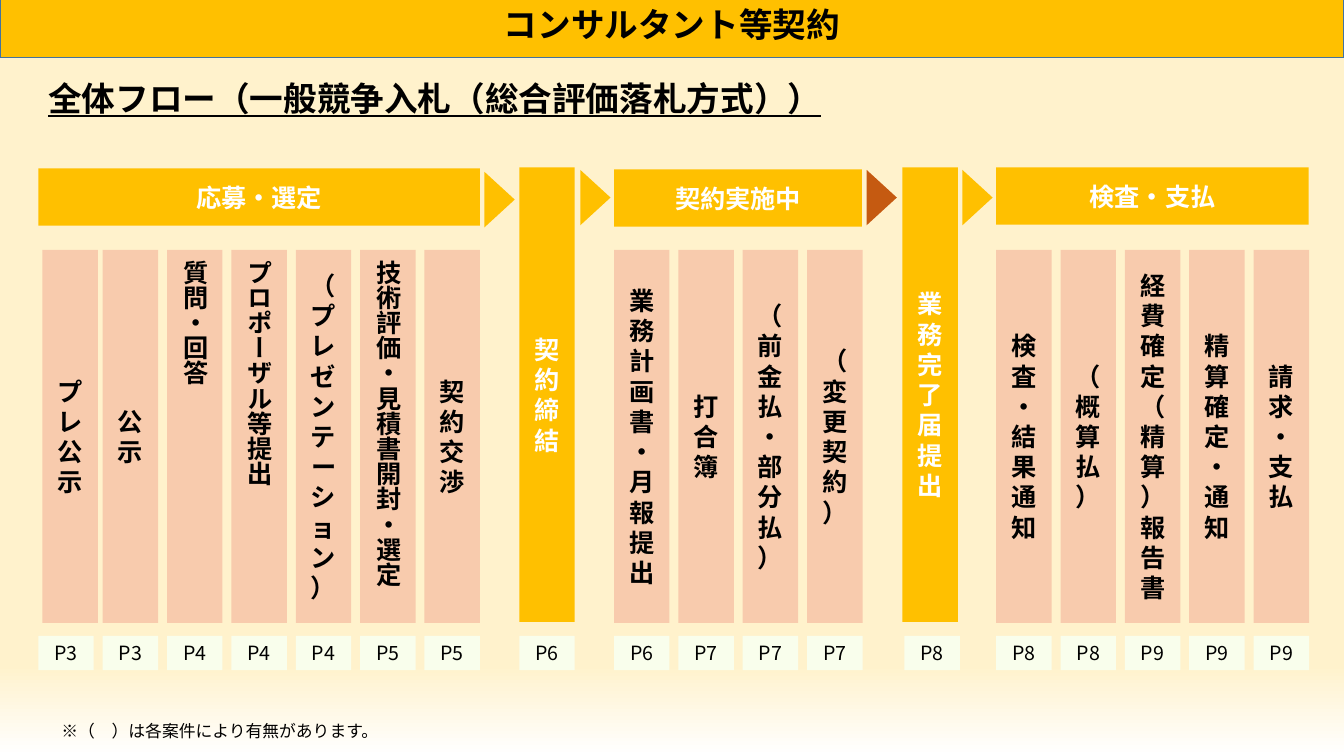
from lxml import etree
from pptx import Presentation
from pptx import util as u
from pptx.dml.color import RGBColor
from pptx.enum import shapes, text
from pptx.oxml.ns import qn

FONT = "Noto Sans CJK JP"
GOLD, PEACH, MINT, RUST = "FFC000", "F8CBAD", "F9FEEC", "C55A11"
BLACK, WHITE = "000000", "FFFFFF"


def paint(color_format, value):
    color_format.rgb = RGBColor.from_string(value)


def write(shape, words, size, color, bold=False, align=text.PP_ALIGN.CENTER, direction="horz", spacing=None):
    frame = shape.text_frame
    frame.text = words
    frame.word_wrap = True
    frame.vertical_anchor = text.MSO_ANCHOR.MIDDLE
    shape.element.txBody.bodyPr.set("vert", direction)
    for paragraph in frame.paragraphs:
        paragraph.alignment = align
        paragraph.line_spacing = spacing
        for run in paragraph.runs:
            run.font.size = u.Pt(size)
            run.font.bold = bold
            run.font.name = FONT
            paint(run.font.color, color)
            east_asian = etree.SubElement(run.font._element, qn("a:ea"))
            east_asian.set("typeface", FONT)


presentation = Presentation()
presentation.slide_width = u.Inches(13.33)
presentation.slide_height = u.Inches(7.5)
slide = presentation.slides.add_slide(presentation.slide_layouts[6])

background = slide.background.fill
background.gradient()
background.gradient_angle = 270
for stop, position, value in zip(background.gradient_stops, (0.88, 1), ("FFF2CC", WHITE)):
    stop.position = position
    paint(stop.color, value)

headings = [
    ("全体フロー（一般競争入札（総合評価落札方式））", 0.38, 0.67, 12, 0.65, 24, True),
    ("※（\u3000）は各案件により有無があります。".replace("\u3000", "　"), 0.51, 6.99, 3.47, 0.55, 12, False),
]
for words, left, top, width, height, size, is_title in headings:
    box = slide.shapes.add_textbox(*map(u.Inches, (left, top, width, height)))
    write(box, words, size, BLACK, is_title, text.PP_ALIGN.LEFT, spacing=0.9)
    if is_title:
        box.text_frame.paragraphs[0].runs[0].font.underline = True

banner = slide.shapes.add_shape(
    shapes.MSO_SHAPE.FLOWCHART_PROCESS, 0, u.Inches(-0.1), presentation.slide_width, u.Inches(0.67))
banner.shadow.inherit = False
banner.fill.solid()
paint(banner.fill.fore_color, GOLD)
paint(banner.line.color, "43739E")
banner.line.width = u.Pt(1)
write(banner, "コンサルタント等契約", 24, BLACK, True)

COLUMN = 0.55
PITCH = (4.21 - 0.38) / 6
STEP_TOP, STEP_HEIGHT = 2.48, 3.7
PAGE_TOP, PAGE_HEIGHT = 6.31, 0.34
UPRIGHT, EAST, STACKED = "horz", "eaVert", "wordArtVertRtl"

phases = [
    ("応募・選定", 0.38, 1.67, 4.38, [
        ("プレ公示", UPRIGHT, "P3"),
        ("公示", UPRIGHT, "P3"),
        ("質問・回答", EAST, "P4"),
        ("プロポーザル等提出", EAST, "P4"),
        ("（プレゼンテーション）", STACKED, "P4"),
        ("技術評価・見積書開封・選定", EAST, "P5"),
        ("契約交渉", UPRIGHT, "P5"),
    ]),
    ("契約実施中", 6.09, 1.68, 2.46, [
        ("業務計画書・月報提出", UPRIGHT, "P6"),
        ("打合簿", UPRIGHT, "P7"),
        ("（前金払・部分払）", STACKED, "P7"),
        ("（変更契約）", STACKED, "P7"),
    ]),
    ("検査・支払", 9.88, 1.66, 3.1, [
        ("検査・結果通知", UPRIGHT, "P8"),
        ("（概算払）", STACKED, "P8"),
        ("経費確定（精算）報告書", STACKED, "P9"),
        ("精算確定\n・通知", UPRIGHT, "P9"),
        ("請求・支払", UPRIGHT, "P9"),
    ]),
]
milestones = [("契約締結", 5.15, "P6", 5.15), ("業務完了届提出", 8.95, "P8", 8.97)]

boxes = []
for phase, start, top, width, steps in phases:
    boxes.append((phase, start, top, width, 0.57, GOLD, 18, WHITE, True, UPRIGHT))
    for index, (step, direction, page) in enumerate(steps):
        left = start + index * PITCH
        step_left = 0.42 if step == "プレ公示" else left
        boxes.append((step, step_left, STEP_TOP, COLUMN, STEP_HEIGHT, PEACH, 18, BLACK, True, direction))
        boxes.append((page, left, PAGE_TOP, COLUMN, PAGE_HEIGHT, MINT, 14, BLACK, False, UPRIGHT))
for milestone, left, page, page_left in milestones:
    boxes.append((milestone, left, 1.66, COLUMN, 4.51, GOLD, 18, WHITE, True, UPRIGHT))
    boxes.append((page, page_left, PAGE_TOP, COLUMN, PAGE_HEIGHT, MINT, 14, BLACK, False, UPRIGHT))

for words, left, top, width, height, fill, size, color, bold, direction in boxes:
    box = slide.shapes.add_shape(shapes.MSO_SHAPE.RECTANGLE, *map(u.Inches, (left, top, width, height)))
    box.shadow.inherit = False
    box.fill.solid()
    paint(box.fill.fore_color, fill)
    box.line.fill.background()
    write(box, words, size, color, bold, direction=direction)

for left, top, fill in [(4.68, 1.83, GOLD), (5.63, 1.81, GOLD), (8.47, 1.81, RUST), (9.42, 1.81, GOLD)]:
    arrow = slide.shapes.add_shape(
        shapes.MSO_SHAPE.ISOSCELES_TRIANGLE, *map(u.Inches, (left, top, COLUMN, 0.3)))
    arrow.rotation = 90
    arrow.shadow.inherit = False
    arrow.fill.solid()
    paint(arrow.fill.fore_color, fill)
    arrow.line.fill.background()

presentation.save("out.pptx")
